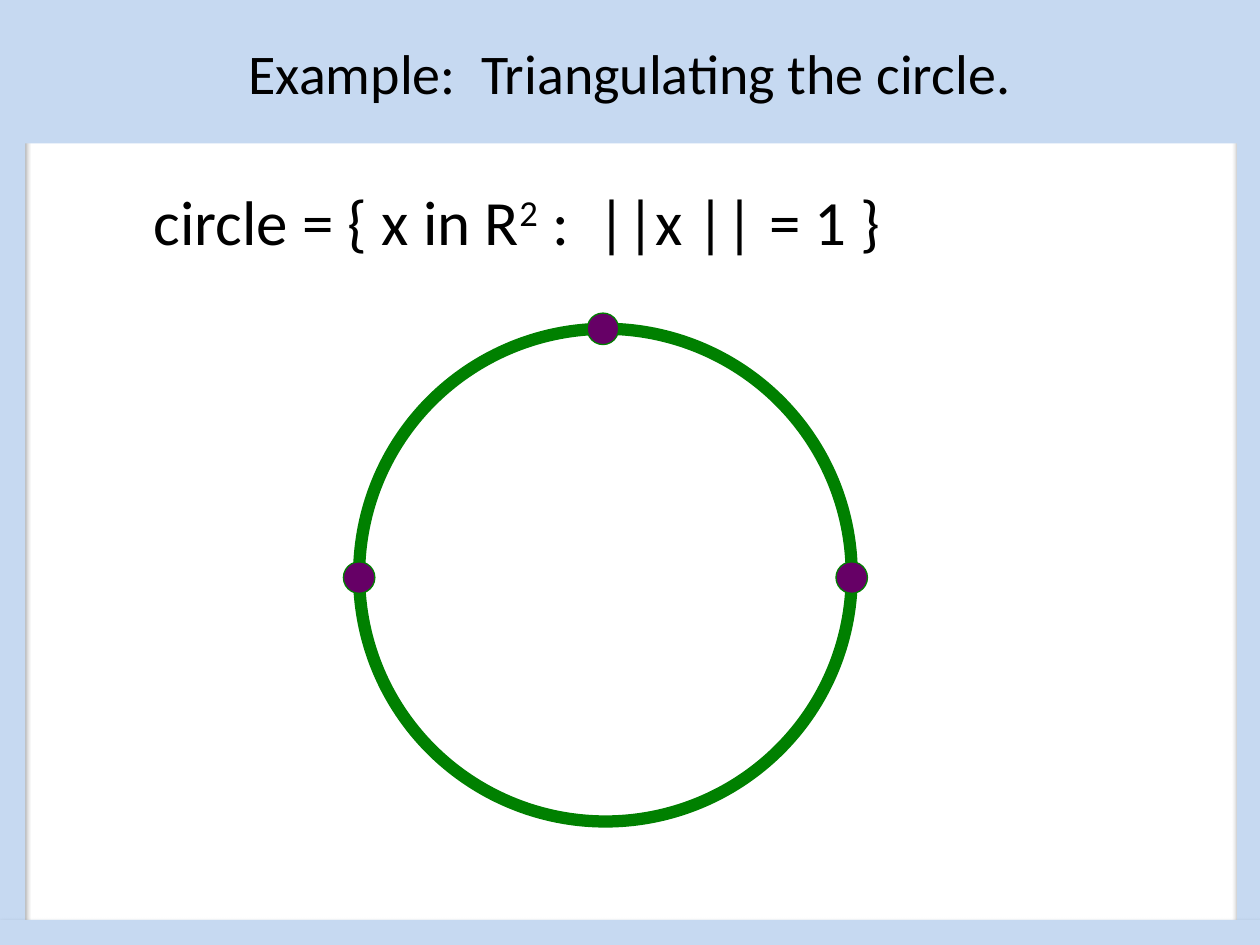
from lxml import etree
from pptx import Presentation
from pptx.dml.color import RGBColor
from pptx.enum.shapes import MSO_SHAPE
from pptx.enum.text import MSO_ANCHOR, MSO_AUTO_SIZE, PP_ALIGN
from pptx.oxml.ns import qn
from pptx.util import Pt

RECTANGLE, OVAL = MSO_SHAPE.RECTANGLE, MSO_SHAPE.OVAL
MIDDLE, CENTER = MSO_ANCHOR.MIDDLE, PP_ALIGN.CENTER
NO_AUTOSIZE, GROW = MSO_AUTO_SIZE.NONE, MSO_AUTO_SIZE.SHAPE_TO_FIT_TEXT

WIDTH, HEIGHT = 720, 540
TITLE_ONLY = 5
FONT = "Calibri"
COLORS = {"frame": "C6D9F1", "circle": "008000", "vertex": "660066",
          "text": "000000", "shadow": "000000"}


def color(name):
    return RGBColor.from_string(COLORS[name])


def fill_shape(shape, name):
    shape.fill.solid()
    shape.fill.fore_color.rgb = color(name)


def style_font(font, size):
    font.name = FONT
    font.size = Pt(size)
    font.color.rgb = color("text")


def add_soft_shadow(shape):
    effects = shape._element.spPr.find(qn("a:effectLst"))
    shadow = etree.SubElement(effects, qn("a:outerShdw"), blurRad=str(Pt(3.1)),
                              dist=str(Pt(1.8)), dir="5400000", rotWithShape="0")
    shade = etree.SubElement(shadow, qn("a:srgbClr"), val=COLORS["shadow"])
    etree.SubElement(shade, qn("a:alpha"), val="35000")


def add_frame(slide, left, top, width, height, bar=14.4):
    """Four bars along the inside of the box; all but the top one cast a shadow."""
    bars = [(left, top, bar, height, True),
            (left + width - bar + 1.4, top, bar - 1.4, height, True),
            (left, top, width, bar, False),
            (left, top + height - bar, width, bar, True)]
    for x, y, w, h, shadowed in bars:
        shape = slide.shapes.add_shape(RECTANGLE, Pt(x), Pt(y), Pt(w), Pt(h))
        shape.shadow.inherit = False
        fill_shape(shape, "frame")
        shape.line.fill.background()
        if shadowed:
            add_soft_shadow(shape)


def add_title(slide, left, top, width, height):
    title = slide.shapes.title
    title.left, title.top, title.width, title.height = map(Pt, (left, top, width, height))
    fill_shape(title, "frame")
    frame = title.text_frame
    frame.auto_size = NO_AUTOSIZE
    frame.vertical_anchor = MIDDLE
    paragraph = frame.paragraphs[0]
    paragraph.text = "Example:  Triangulating the circle."
    paragraph.alignment = CENTER
    style_font(paragraph.font, 32)
    # Bring the title in front of the frame bars
    slide.shapes._spTree.append(title._element)


def add_definition(slide, left, top, width, height):
    box = slide.shapes.add_textbox(Pt(left), Pt(top), Pt(width), Pt(height))
    frame = box.text_frame
    frame.word_wrap = True
    frame.auto_size = GROW
    paragraph = frame.paragraphs[0]
    style_font(paragraph.font, 36)
    for text, baseline in [("circle = { x in R", 0), ("2", 30000),
                           (" :  ||x || = 1 }", 0)]:
        run = paragraph.add_run()
        run.text = text
        if baseline:
            run.font._element.set("baseline", str(baseline))


def add_oval(slide, center_x, center_y, diameter, line_width):
    oval = slide.shapes.add_shape(OVAL, Pt(center_x - diameter / 2),
                                  Pt(center_y - diameter / 2), Pt(diameter), Pt(diameter))
    oval.shadow.inherit = False
    oval.line.color.rgb = color("circle")
    oval.line.width = Pt(line_width)
    return oval


def add_triangulated_circle(slide, left, top, diameter, nudge=1.4):
    """Circle with vertices at its left, right and top."""
    radius = diameter / 2
    center_x, center_y = left + radius, top + radius
    add_oval(slide, center_x, center_y, diameter, 7).fill.background()
    for dx, dy in [(-radius, nudge), (radius, nudge), (-nudge, -radius)]:
        vertex = add_oval(slide, center_x + dx, center_y + dy, 18, 0.75)
        fill_shape(vertex, "vertex")


def main():
    presentation = Presentation()
    presentation.slide_width, presentation.slide_height = Pt(WIDTH), Pt(HEIGHT)
    slide = presentation.slides.add_slide(presentation.slide_layouts[TITLE_ONLY])
    add_frame(slide, 0, 0, WIDTH, HEIGHT)
    add_title(slide, 0, 0, WIDTH, 82)
    add_definition(slide, 80.6, 100.8, 600, 51)
    add_triangulated_circle(slide, 205.2, 187.9, 281.5)
    presentation.save("out.pptx")


if __name__ == "__main__":
    main()
